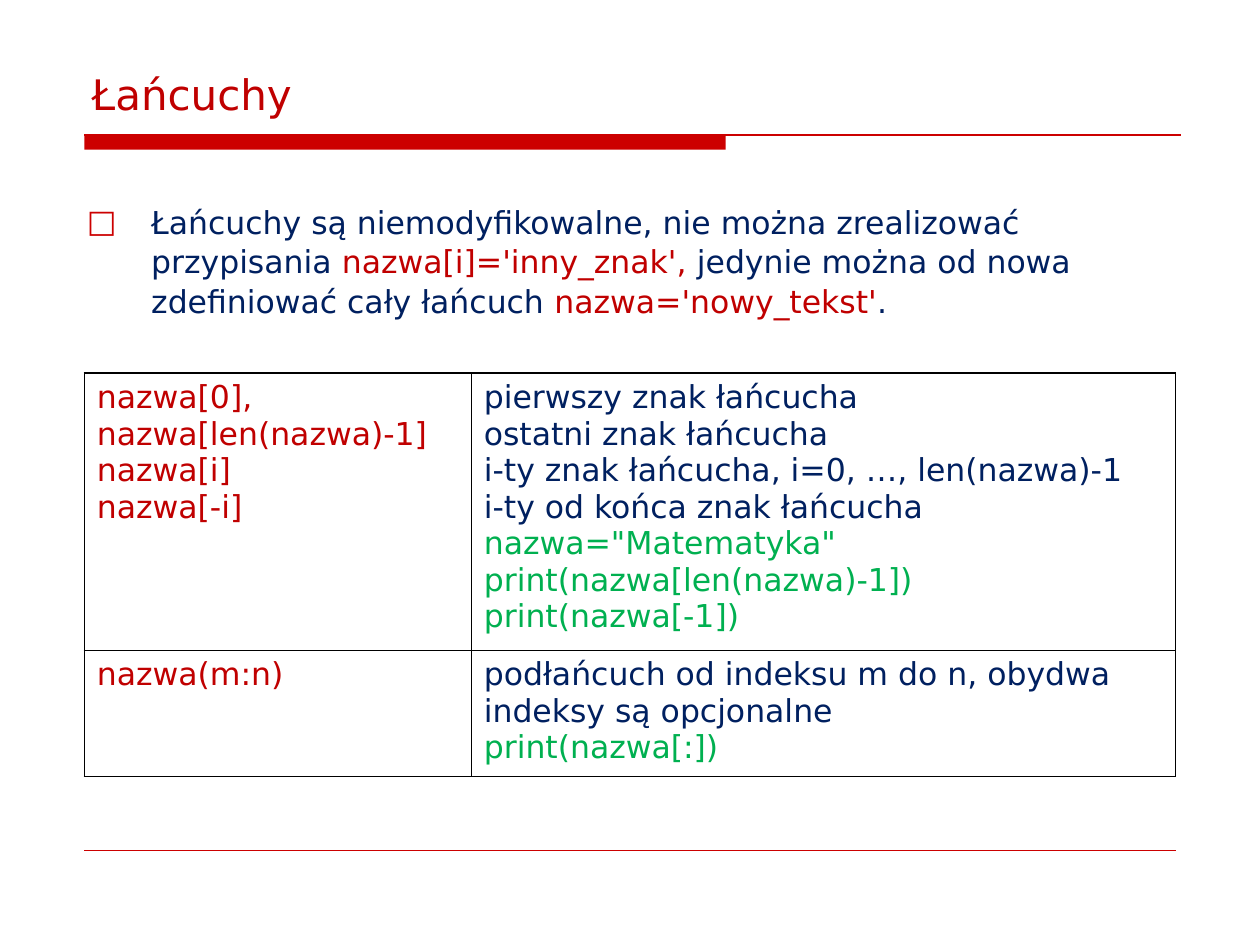
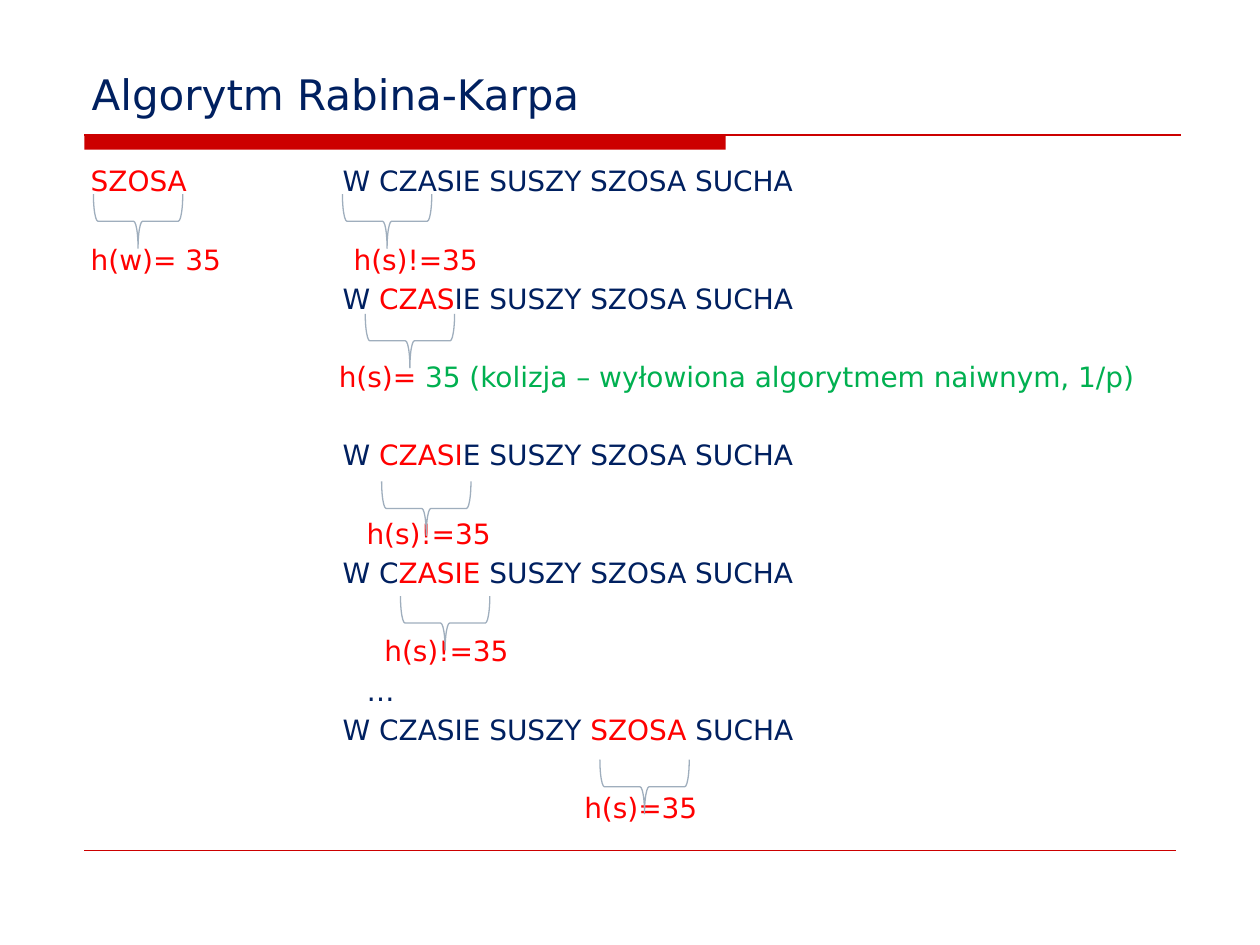
"""Builds two slides on strings: Python indexing and the Rabin-Karp algorithm."""
from lxml.etree import SubElement
from pptx import Presentation
from pptx.dml.color import RGBColor as RGB
from pptx.enum.shapes import MSO_CONNECTOR as CONN, MSO_SHAPE as SHAPE
from pptx.enum.text import MSO_ANCHOR as ANCHOR
from pptx.oxml.ns import qn
from pptx.util import Cm, Pt

FONT = "DejaVu Sans"
C = {"band": "CC0000", "code": "C00000", "navy": "002060", "green": "00B050",
     "red": "FF0000", "brace": "9FAEBD", "black": "000000", "white": "FFFFFF"}


def write(tf, paras, size=18, anchor=ANCHOR.TOP):
    """Fill a text frame; each paragraph is a list of (text, colour) runs."""
    tf.word_wrap = True
    tf.vertical_anchor = anchor
    for i, runs in enumerate(paras):
        p = tf.paragraphs[0] if i == 0 else tf.add_paragraph()
        for text, color in runs:
            r = p.add_run()
            r.text = text
            r.font.name, r.font.size = FONT, Pt(size)
            r.font.color.rgb = RGB.from_string(C[color])


def box(s, x, y, w, h):
    """Add a text box measured in centimetres and return its text frame."""
    return s.shapes.add_textbox(Cm(x), Cm(y), Cm(w), Cm(h)).text_frame


prs = Presentation()
prs.slide_width, prs.slide_height = Cm(25.4), Cm(19.05)

slides = []
for title, color in [("Łańcuchy", "code"), ("Algorytm Rabina-Karpa", "navy")]:
    s = prs.slides.add_slide(prs.slide_layouts[6])
    slides.append(s)
    band = s.shapes.add_shape(SHAPE.RECTANGLE, Cm(1.7), Cm(2.72), Cm(12.93), Cm(0.3))
    band.shadow.inherit = False
    band.fill.solid()
    band.fill.fore_color.rgb = RGB.from_string(C["band"])
    band.line.fill.background()
    for y, right, width in [(2.72, 23.8, 0.75), (17.15, 23.7, 0.25)]:
        rule = s.shapes.add_connector(CONN.STRAIGHT, Cm(1.7), Cm(y), Cm(right), Cm(y))
        rule.line.color.rgb = RGB.from_string(C["band"])
        rule.line.width = Pt(width)
        SubElement(rule._element.spPr, qn("a:effectLst"))
    write(box(s, 1.6, 0.84, 22.23, 1.68), [[(title, color)]], size=24, anchor=ANCHOR.BOTTOM)

strings, rabin_karp = slides

tf = box(strings, 1.5, 3.94, 22.23, 3.4)
write(tf, [[
    ("Łańcuchy są niemodyfikowalne, nie można zrealizować przypisania ", "navy"),
    ("nazwa[i]='inny_znak', ", "code"),
    ("jedynie można od nowa zdefiniować cały łańcuch ", "navy"),
    ("nazwa='nowy_tekst'", "code"),
    (".", "navy")]])
p = tf.paragraphs[0]
p.line_spacing = 1.04
pPr = p._p.get_or_add_pPr()
pPr.set("marL", str(Cm(1.3)))
pPr.set("indent", str(-Cm(1.3)))
SubElement(SubElement(pPr, qn("a:buClr")), qn("a:srgbClr"), val=C["band"])
SubElement(pPr, qn("a:buFont"), typeface=FONT)
SubElement(pPr, qn("a:buChar"), char="□")

CELLS = [
    [[("code", ["nazwa[0],", "nazwa[len(nazwa)-1]", "nazwa[i]", "nazwa[-i]"])],
     [("navy", ["pierwszy znak łańcucha", "ostatni znak łańcucha",
                "i-ty znak łańcucha, i=0, …, len(nazwa)-1",
                "i-ty od końca znak łańcucha"]),
      ("green", ['nazwa="Matematyka"', "print(nazwa[len(nazwa)-1])", "print(nazwa[-1])"])]],
    [[("code", ["nazwa(m:n)"])],
     [("navy", ["podłańcuch od indeksu m do n, obydwa indeksy są opcjonalne"]),
      ("green", ["print(nazwa[:])"])]],
]
table = strings.shapes.add_table(2, 2, Cm(1.7), Cm(7.52), Cm(22), Cm(7.88)).table
table.first_row = table.horz_banding = False
for col, width in zip(table.columns, [7.8, 14.2]):
    col.width = Cm(width)
for row, height, contents in zip(table.rows, [5.42, 2.46], CELLS):
    row.height = Cm(height)
    for cell, groups in zip(row.cells, contents):
        write(cell.text_frame, [[(line, color)] for color, lines in groups for line in lines])
        tcPr = cell._tc.get_or_add_tcPr()
        for side in ("lnL", "lnR", "lnT", "lnB"):
            ln = SubElement(tcPr, qn(f"a:{side}"), w=str(Pt(1)))
            SubElement(SubElement(ln, qn("a:solidFill")), qn("a:srgbClr"), val=C["black"])
        cell.fill.solid()
        cell.fill.fore_color.rgb = RGB.from_string(C["white"])

TOP, PITCH = 3.3, 0.79
PATTERN_X, TEXT_X = 1.83, 6.91
SENTENCE = "W CZASIE SUSZY SZOSA SUCHA"
MISMATCH = [("h(s)!=35", "red")]

for row, window in [(0, ""), (3, "CZAS"), (7, "CZASI"), (10, "ZASIE"), (14, "SZOSA")]:
    before, match, after = SENTENCE.partition(window) if window else (SENTENCE, "", "")
    runs = [(before, "navy"), (match, "red"), (after, "navy")]
    tf = box(rabin_karp, TEXT_X, TOP + row * PITCH, 16, PITCH)
    tf.margin_left = tf.margin_top = 0
    write(tf, [[run for run in runs if run[0]]], size=16)

for row, x, runs in [
        (0, PATTERN_X, [("SZOSA", "red")]),
        (2, PATTERN_X, [("h(w)= 35", "red")]),
        (2, 7.13, MISMATCH),
        (5, 6.83, [("h(s)= ", "red"),
                   ("35 (kolizja – wyłowiona algorytmem naiwnym, 1/p)", "green")]),
        (9, 7.39, MISMATCH),
        (12, 7.75, MISMATCH),
        (13, 7.39, [("…", "navy")]),
        (16, 11.78, [("h(s)=35", "red")])]:
    tf = box(rabin_karp, x, TOP + row * PITCH, 23.7 - x, PITCH)
    tf.margin_left = tf.margin_top = 0
    write(tf, [runs], size=16)

for x, y in [(2.24, 3.56), (7.26, 3.56), (7.72, 5.97),
             (8.05, 9.35), (8.43, 11.66), (12.45, 14.96)]:
    brace = rabin_karp.shapes.add_shape(SHAPE.LEFT_BRACE, Cm(x), Cm(y), Cm(1.09), Cm(1.8))
    brace.rotation = 270
    brace.shadow.inherit = False
    brace.fill.background()
    brace.line.color.rgb = RGB.from_string(C["brace"])
    brace.line.width = Pt(0.75)

prs.save("out.pptx")
